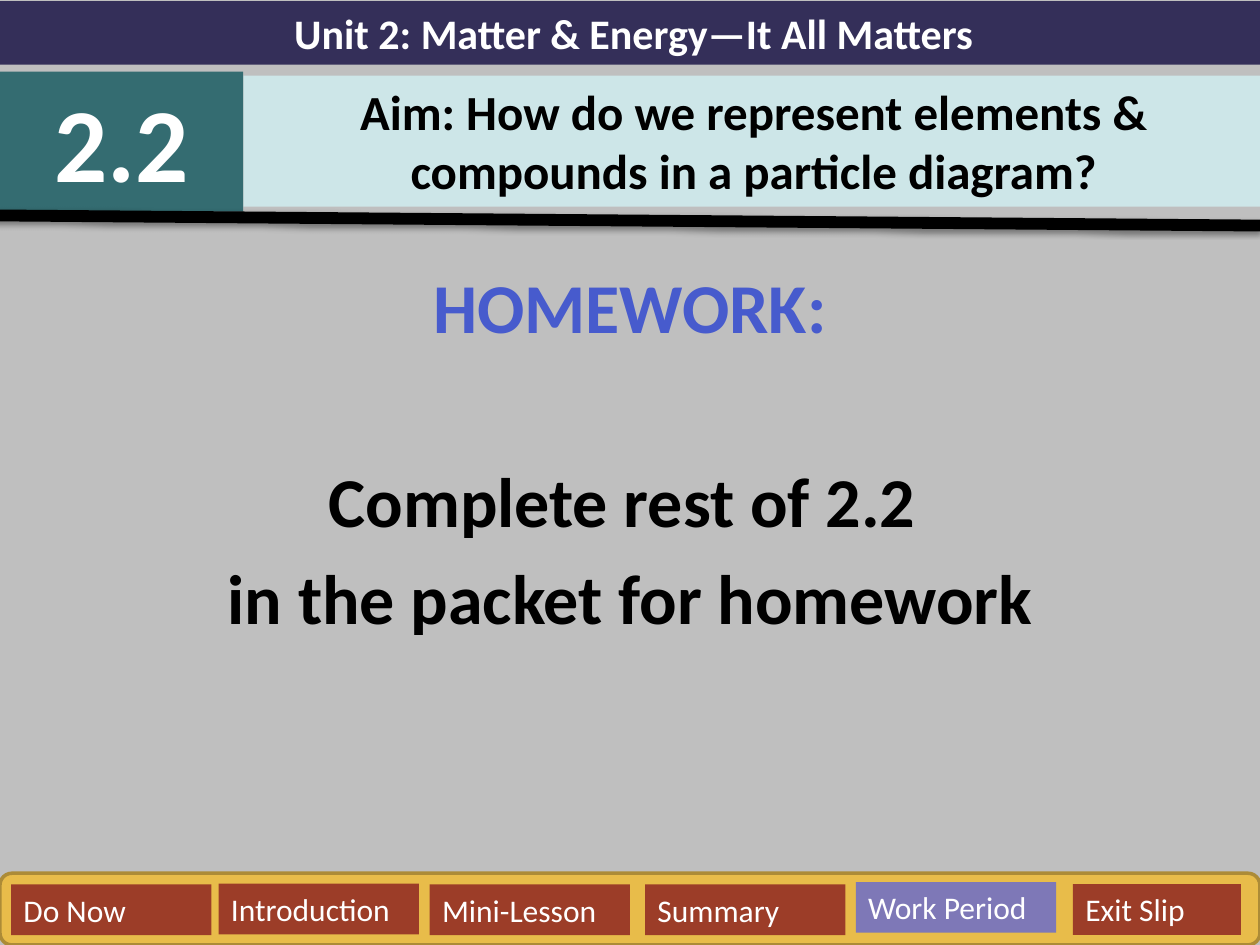
from lxml.etree import SubElement
from pptx import Presentation
from pptx.dml.color import RGBColor
from pptx.enum.shapes import MSO_CONNECTOR, MSO_SHAPE
from pptx.enum.text import MSO_ANCHOR, MSO_AUTO_SIZE, PP_ALIGN
from pptx.oxml.ns import qn
from pptx.util import Pt

GREY = RGBColor(0xBF, 0xBF, 0xBF)
NAVY = RGBColor(0x34, 0x2F, 0x59)
TEAL = RGBColor(0x34, 0x6C, 0x71)
PALE = RGBColor(0xCD, 0xE6, 0xE8)
GOLD = RGBColor(0xE8, 0xBC, 0x4A)
BRONZE = RGBColor(0xAC, 0x8B, 0x37)
RUST = RGBColor(0x9C, 0x3D, 0x28)
VIOLET = RGBColor(0x7E, 0x78, 0xB7)
BLUE = RGBColor(0x47, 0x5B, 0xCD)
WHITE = RGBColor(0xFF, 0xFF, 0xFF)
BLACK = RGBColor(0, 0, 0)

# Content: text, box (left, top, width, height), fill, size
AIM = "Aim: How do we represent elements & compounds in a particle diagram?"
AIM_BOX = (139, 43.2, 583.2, 74.9)
HEADERS = [
    ("Unit 2: Matter & Energy—It All Matters", (0, 0.7, 724.3, 36.2), NAVY, 24),
    ("2.2", (0, 41, 139, 79.9), TEAL, 60),
]
# Homework lines: text, colour, space before
HOMEWORK = [
    ("HOMEWORK:", BLUE, 0),
    ("Complete rest of 2.2 ", BLACK, 63.2),
    ("in the packet for homework", BLACK, 7.2),
]
HOMEWORK_BOX = (0, 146.9, 720, 393.1)
RULE = (-3.6, 123.1, 720, 128.9)
TAB_BAR = (0, 499, 720, 41)
# Tabs: text, left, top, width, fill
TAB_HEIGHT = 29
TABS = [
    ("Do Now", 6.3, 505.4, 114.5, RUST),
    ("Introduction", 124.9, 504.9, 114.5, RUST),
    ("Mini-Lesson", 245.5, 505.4, 114.5, RUST),
    ("Summary", 368.6, 505.4, 114.5, RUST),
    ("Work Period", 489, 504, 114.5, VIOLET),
    ("Exit Slip", 613.1, 505.2, 96, RUST),
]


def set_all(target, values):
    for key, value in values.items():
        setattr(target, key, value)


def place(part, box):
    set_all(part, dict(zip(("left", "top", "width", "height"), map(Pt, box))))


def write(part, lines, size, bold=True, align=PP_ALIGN.CENTER):
    frame = part.text_frame
    set_all(frame, {"word_wrap": True, "auto_size": MSO_AUTO_SIZE.NONE,
                    "vertical_anchor": MSO_ANCHOR.TOP})
    for i, (text, colour, before) in enumerate(lines):
        line = frame.add_paragraph() if i else frame.paragraphs[0]
        set_all(line, {"alignment": align, "space_before": Pt(before)})
        run = line.add_run()
        run.text = text
        set_all(run.font, {"name": "Calibri", "size": Pt(size), "bold": bold})
        run.font.color.rgb = colour


def paint(part, colour):
    part.fill.solid()
    part.fill.fore_color.rgb = colour


def add_block(slide, box, colour, kind=MSO_SHAPE.RECTANGLE):
    block = slide.shapes.add_shape(kind, *map(Pt, box))
    block.shadow.inherit = False
    paint(block, colour)
    block.line.fill.background()
    return block


def add_rule(slide):
    rule = slide.shapes.add_connector(MSO_CONNECTOR.STRAIGHT, *map(Pt, RULE))
    rule.line.color.rgb = BLACK
    rule.line.width = Pt(6.75)
    effects = SubElement(rule._element.spPr, qn("a:effectLst"))
    shadow = SubElement(effects, qn("a:outerShdw"), blurRad=str(Pt(3.1)),
                        dist=str(Pt(1.6)), dir="5400000", rotWithShape="0")
    tint = SubElement(shadow, qn("a:srgbClr"), val=str(BLACK))
    SubElement(tint, qn("a:alpha"), val="38000")


def main():
    deck = Presentation()
    set_all(deck, {"slide_width": Pt(720), "slide_height": Pt(540)})
    slide = deck.slides.add_slide(deck.slide_layouts[5])
    paint(slide.background, GREY)

    # Aim
    aim = slide.shapes.title
    place(aim, AIM_BOX)
    paint(aim, PALE)
    write(aim, [(AIM, BLACK, 0)], 28)

    # Homework
    homework = slide.shapes.add_textbox(*map(Pt, HOMEWORK_BOX))
    write(homework, HOMEWORK, 40)

    # Unit and lesson number
    for text, box, colour, size in HEADERS:
        write(add_block(slide, box, colour), [(text, WHITE, 0)], size)
    add_rule(slide)

    # Lesson tabs
    bar = add_block(slide, TAB_BAR, GOLD, MSO_SHAPE.ROUNDED_RECTANGLE)
    bar.line.color.rgb = BRONZE
    bar.line.width = Pt(2)
    for text, left, top, width, colour in TABS:
        tab = add_block(slide, (left, top, width, TAB_HEIGHT), colour)
        write(tab, [(text, WHITE, 0)], 18, False, PP_ALIGN.LEFT)

    deck.save("out.pptx")


if __name__ == "__main__":
    main()
